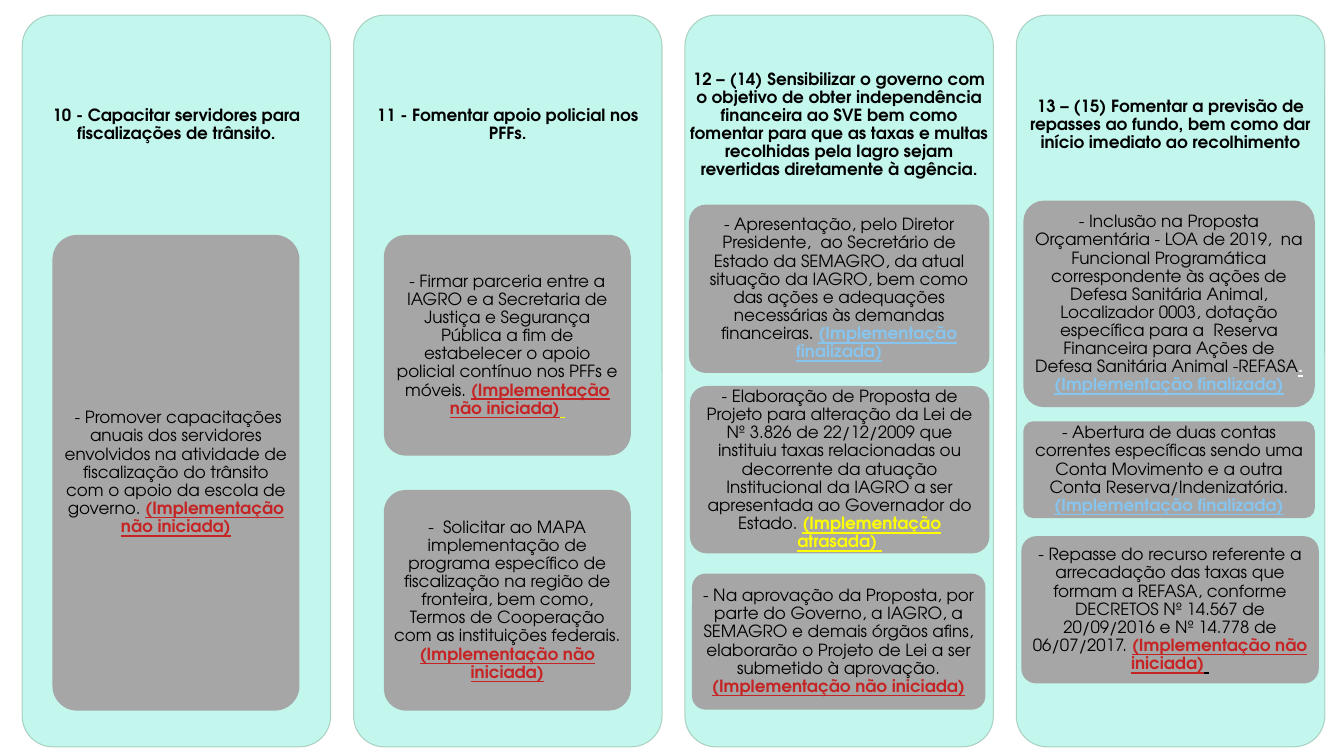
from lxml.etree import SubElement
from pptx import Presentation
from pptx.dml.color import RGBColor
from pptx.enum.shapes import MSO_SHAPE as Preset
from pptx.enum.text import MSO_ANCHOR as Anchor, PP_ALIGN as Align
from pptx.oxml.ns import qn
from pptx.util import Inches, Pt

FONT = "TeX Gyre Adventor"
COLORS = {
    "background": "FFFFFF", "column": "C3F7ED", "border": "8AB7A1",
    "card": "A6A6A6", "text": "000000", "not_started": "C62324",
    "late": "FFFF00", "done": "86C5EF", "white": "FFFFFF",
}
NOT_STARTED = ("(Implementação não iniciada)", "not_started")
DONE = ("(Implementação finalizada)", "done")
LATE = ("(Implementação atrasada) ", "late")

COLUMN_TOP, COLUMN_WIDTH, COLUMN_HEIGHT = 0.15, 3.06, 7.26
HEADING_HEIGHT = 2.18
FIRST_LEFT, LAST_LEFT = 0.22, 10.08

# Each column: heading and cards; a card is a box relative to its column,
# the action and the underlined status runs that follow it
COLUMNS = [
    ("10 - Capacitar servidores para fiscalizações de trânsito.", [
        ((0.3, 2.18, 2.45, 4.72),
         " - Promover capacitações anuais dos servidores envolvidos na atividade de "
         "fiscalização do trânsito com o apoio da escola de governo. ",
         [NOT_STARTED]),
    ]),
    ("11 - Fomentar apoio policial nos PFFs.", [
        ((0.3, 2.18, 2.45, 2.19),
         "- Firmar parceria entre a IAGRO e a Secretaria de Justiça e Segurança Pública "
         "a fim de estabelecer o apoio policial contínuo nos PFFs e móveis. ",
         [NOT_STARTED, (" ", "late")]),
        ((0.3, 4.71, 2.45, 2.19),
         "-  Solicitar ao MAPA implementação de programa específico de fiscalização na "
         "região de fronteira, bem como, Termos de Cooperação com as instituições "
         "federais. ",
         [NOT_STARTED]),
    ]),
    ("12 – (14) Sensibilizar o governo com o objetivo de obter independência financeira "
     "ao SVE bem como fomentar para que as taxas e multas recolhidas pela Iagro sejam "
     "revertidas diretamente à agência.", [
        ((0.04, 1.88, 2.98, 1.67),
         "- Apresentação, pelo Diretor Presidente,  ao Secretário de Estado da SEMAGRO, "
         "da atual situação da IAGRO, bem como das ações e adequações necessárias às "
         "demandas financeiras. ",
         [DONE]),
        ((0.05, 3.68, 2.97, 1.66),
         "- Elaboração de Proposta de Projeto para alteração da Lei de Nº 3.826 de "
         "22/12/2009 que instituiu taxas relacionadas ou decorrente da atuação "
         "Institucional da IAGRO a ser apresentada ao Governador do Estado. ",
         [LATE]),
        ((0.07, 5.54, 2.91, 1.35),
         "- Na aprovação da Proposta, por parte do Governo, a IAGRO, a SEMAGRO e demais "
         "órgãos afins, elaborarão o Projeto de Lei a ser submetido à aprovação. ",
         [NOT_STARTED]),
    ]),
    ("13 – (15) Fomentar a previsão de repasses ao fundo, bem como dar início imediato "
     "ao recolhimento", [
        ((0.07, 1.84, 2.89, 2.05),
         "- Inclusão na Proposta Orçamentária - LOA de 2019,  na Funcional Programática "
         "correspondente às ações de Defesa Sanitária Animal, Localizador 0003, dotação "
         "específica para a  Reserva Financeira para Ações de Defesa Sanitária Animal "
         "-REFASA",
         [(". ", "white"), DONE]),
        ((0.07, 4.03, 2.89, 0.96),
         "- Abertura de duas contas correntes específicas sendo uma Conta Movimento e a "
         "outra Conta Reserva/Indenizatória. ",
         [DONE]),
        ((0.05, 5.17, 2.95, 1.46),
         "- Repasse do recurso referente a arrecadação das taxas que formam a REFASA, "
         "conforme DECRETOS Nº 14.567 de 20/09/2016 e Nº 14.778 de 06/07/2017. ",
         [NOT_STARTED, (" ", "text")]),
    ]),
]


def color(name):
    return RGBColor.from_string(COLORS[name])


def add_panel(slide, box, fill):
    panel = slide.shapes.add_shape(Preset.ROUNDED_RECTANGLE, *map(Inches, box))
    panel.adjustments[0] = 0.1
    panel.shadow.inherit = False
    panel.fill.solid()
    panel.fill.fore_color.rgb = color(fill)
    panel.line.fill.background()
    return panel


def prepare_paragraph(frame, inset):
    frame.word_wrap = True
    frame.vertical_anchor = Anchor.MIDDLE
    frame.margin_left = frame.margin_right = Inches(inset)
    frame.margin_top = frame.margin_bottom = Inches(inset)
    paragraph = frame.paragraphs[0]
    paragraph.alignment = Align.CENTER
    paragraph.line_spacing = 0.9
    return paragraph


def add_run(paragraph, text, tone="text", bold=False, underline=False):
    run = paragraph.add_run()
    run.text = text
    run.font.name, run.font.size = FONT, Pt(12)
    run.font.bold, run.font.underline = bold, underline
    run.font.color.rgb = color(tone)


def add_card(slide, box, action, statuses):
    card = add_panel(slide, box, "card")
    paragraph = prepare_paragraph(card.text_frame, 0.03)
    add_run(paragraph, action)
    for status, tone in statuses:
        add_run(paragraph, status, tone, bold=True, underline=True)


def add_column(slide, left, top, heading, cards):
    # Background panel with a translucent border
    panel = add_panel(slide, (left, top, COLUMN_WIDTH, COLUMN_HEIGHT), "column")
    panel.line.color.rgb = color("border")
    panel.line.width = Pt(0.75)
    border = panel.line.fill._xPr.find(qn("a:solidFill"))[0]
    SubElement(border, qn("a:alpha")).set("val", "60000")

    # Heading
    heading_box = slide.shapes.add_textbox(
        *map(Inches, (left, top, COLUMN_WIDTH, HEADING_HEIGHT)))
    add_run(prepare_paragraph(heading_box.text_frame, 0.05), heading, bold=True)

    # Action cards
    for (dx, dy, width, height), action, statuses in cards:
        add_card(slide, (left + dx, top + dy, width, height), action, statuses)


def main():
    deck = Presentation()
    deck.slide_width, deck.slide_height = Inches(13.33), Inches(7.5)
    slide = deck.slides.add_slide(deck.slide_layouts[6])
    slide.background.fill.solid()
    slide.background.fill.fore_color.rgb = color("background")

    pitch = (LAST_LEFT - FIRST_LEFT) / (len(COLUMNS) - 1)
    for index, (heading, cards) in enumerate(COLUMNS):
        add_column(slide, FIRST_LEFT + index * pitch, COLUMN_TOP, heading, cards)

    deck.save("out.pptx")


if __name__ == "__main__":
    main()
